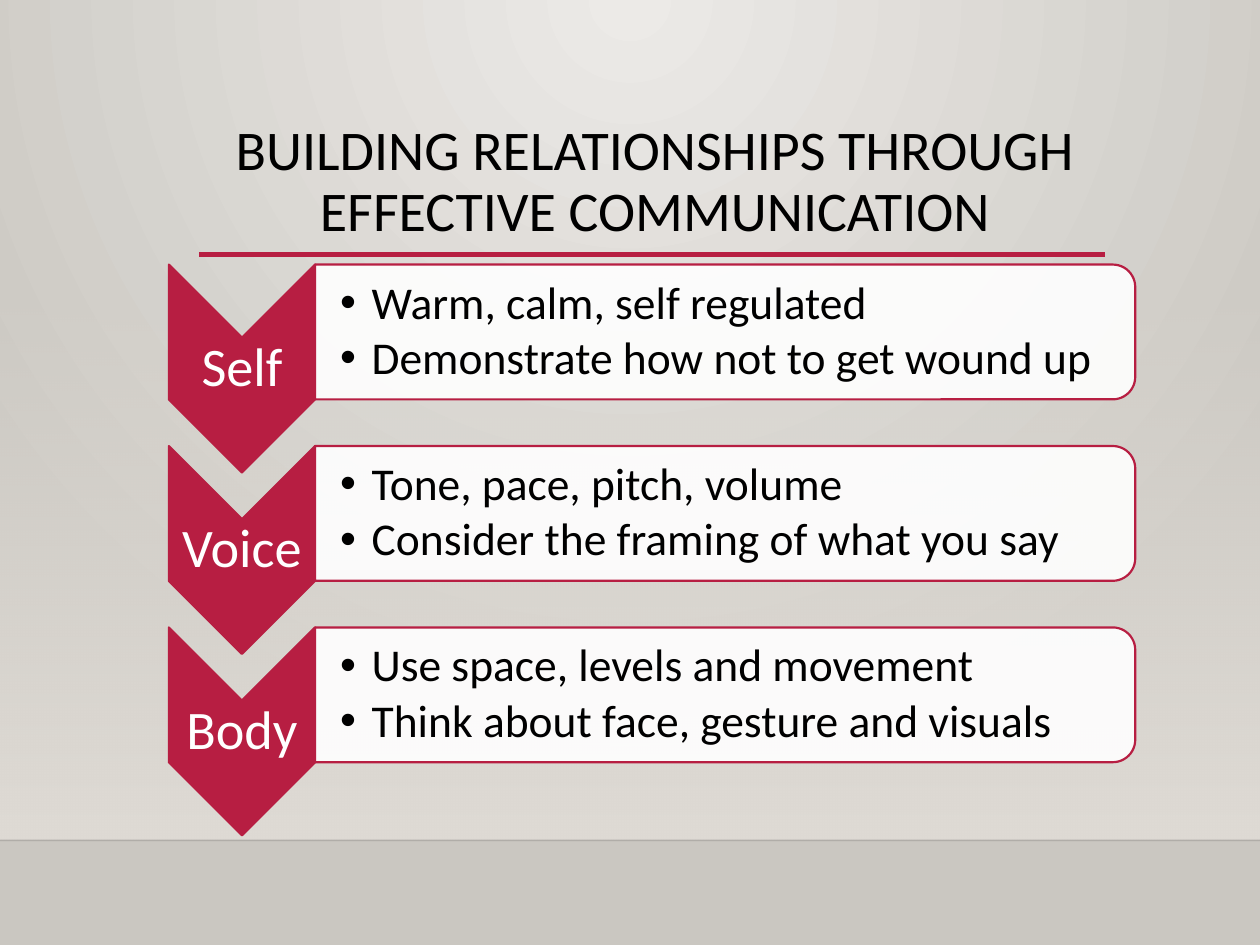
from lxml.etree import SubElement
from pptx import Presentation
from pptx.dml.color import RGBColor
from pptx.enum.shapes import MSO_CONNECTOR, MSO_SHAPE as SHAPE
from pptx.enum.text import MSO_ANCHOR as ANCHOR, PP_ALIGN as ALIGN
from pptx.oxml.ns import qn
from pptx.util import Inches, Pt

CRIMSON = RGBColor(0xB7, 0x1E, 0x42)
WHITE = RGBColor(0xFF, 0xFF, 0xFF)
BLACK = RGBColor(0, 0, 0)
PALE = RGBColor(0xEC, 0xEA, 0xE7)
STONE = RGBColor(0xCA, 0xC7, 0xC1)
SAND = RGBColor(0xDF, 0xDB, 0xD5)

TITLE = "BUILDING RELATIONSHIPS THROUGH EFFECTIVE COMMUNICATION"
TOPICS = [
    ("Self", ["Warm, calm, self regulated", "Demonstrate how not to get wound up"]),
    ("Voice", ["Tone, pace, pitch, volume", "Consider the framing of what you say"]),
    ("Body", ["Use space, levels and movement", "Think about face, gesture and visuals"]),
]


def set_alpha(color, percent):
    """Set the opacity of an RGB colour element."""
    SubElement(color, qn("a:alpha"), val=str(percent * 1000))


def set_gradient(fill, first, last):
    """Turn a fill into a gradient between two colours."""
    fill.gradient()
    for stop, color, position in zip(fill.gradient_stops, (first, last), (0, 1)):
        stop.color.rgb = color
        stop.position = position


def add_text(page, box, lines, size, color=BLACK, align=ALIGN.LEFT,
             anchor=ANCHOR.MIDDLE, insets=(0.02, 0.02, 0.02, 0.02), bullet=False):
    """Add a text box with one paragraph for each line."""
    frame = page.shapes.add_textbox(*map(Inches, box)).text_frame
    frame.word_wrap = True
    frame.vertical_anchor = anchor
    (frame.margin_left, frame.margin_top,
     frame.margin_right, frame.margin_bottom) = map(Inches, insets)
    for index, line in enumerate(lines):
        para = frame.add_paragraph() if index else frame.paragraphs[0]
        para.alignment = align
        para.line_spacing = 0.9
        if bullet:
            para.space_after = Pt(3.5)
            props = para._p.get_or_add_pPr()
            props.set("marL", str(Inches(0.25)))
            props.set("indent", str(Inches(-0.25)))
            SubElement(props, qn("a:buFont"), typeface="Arial")
            SubElement(props, qn("a:buChar"), char="•")
        span = para.add_run()
        span.text = line
        span.font.name = "Calibri"
        span.font.size = Pt(size)
        span.font.color.rgb = color


def add_rule(page, left, right, top, color, weight):
    """Add a horizontal line and return it."""
    rule = page.shapes.add_connector(
        MSO_CONNECTOR.STRAIGHT, Inches(left), Inches(top), Inches(right), Inches(top))
    rule.line.color.rgb = color
    rule.line.width = Pt(weight)
    SubElement(rule._element.spPr, qn("a:effectLst"))
    return rule


def add_turned(page, kind, box, color):
    """Add a shape turned a quarter clockwise that covers the box."""
    left, top, width, height = box
    shift = (width - height) / 2
    shape = page.shapes.add_shape(
        kind, *map(Inches, (left + shift, top - shift, height, width)))
    shape.rotation = 90
    shape.shadow.inherit = False
    shape.fill.solid()
    shape.fill.fore_color.rgb = color
    shape.line.color.rgb = CRIMSON
    shape.line.width = Pt(1.25)
    return shape


def add_backdrop(page, box):
    """Add the radial background, the wall fading in and the floor line."""
    left, top, width, height = box
    set_gradient(page.background.fill, PALE, STONE)
    gradient = page._element.find(".//" + qn("a:gradFill"))
    gradient.remove(gradient.find(qn("a:lin")))
    circle = SubElement(gradient, qn("a:path"), path="circle")
    SubElement(circle, qn("a:fillToRect"), l="43000", t="0", r="43000", b="100000")

    wall = page.shapes.add_shape(SHAPE.RECTANGLE, *map(Inches, box))
    wall.shadow.inherit = False
    wall.line.fill.background()
    set_gradient(wall.fill, SAND, SAND)
    wall.fill.gradient_angle = 270
    set_alpha(wall._element.spPr.find(".//" + qn("a:srgbClr")), 0)

    floor = add_rule(page, left, left + width, top + height, BLACK, 1)
    set_alpha(floor._element.spPr.find(".//" + qn("a:srgbClr")), 20)


def add_title(page, box):
    """Add the heading and the rule beneath it."""
    left, top, width, height = box
    add_rule(page, left + 0.67, left + width - 0.72, top + 1.1, CRIMSON, 2.5)
    add_text(page, box, [TITLE], 32, align=ALIGN.CENTER, anchor=ANCHOR.TOP,
             insets=(0.1, 0.05, 0.1, 0.05))


def add_topic(page, box, label, points):
    """Add a chevron with its label and the panel of points beside it."""
    left, top, width, height = box
    chevron = 1.16
    panel = (left + chevron, top, width - chevron, 1.07)
    add_turned(page, SHAPE.CHEVRON, (left, top, chevron, height), CRIMSON)
    add_text(page, (left, top + chevron / 2, chevron, height - chevron), [label], 31,
             color=WHITE, align=ALIGN.CENTER)
    card = add_turned(page, SHAPE.ROUND_2_SAME_RECTANGLE, panel, WHITE)
    set_alpha(card._element.spPr.find(".//" + qn("a:srgbClr")), 90)
    add_text(page, (panel[0], top + 0.05, panel[2] - 0.05, 0.97), points, 26,
             insets=(0.2, 0.02, 0.02, 0.02), bullet=True)


def main():
    """Build the slide and save it."""
    deck = Presentation()
    deck.slide_width, deck.slide_height = Inches(10), Inches(7.5)
    page = deck.slides.add_slide(deck.slide_layouts[6])
    add_backdrop(page, (0, 2.2, 10, 4.47))
    add_title(page, (0.91, 0.92, 8.58, 1.34))
    for row, (label, points) in enumerate(TOPICS):
        add_topic(page, (1.34, 2.1 + row * 1.44, 7.67, 1.65), label, points)
    deck.save("out.pptx")


if __name__ == "__main__":
    main()
